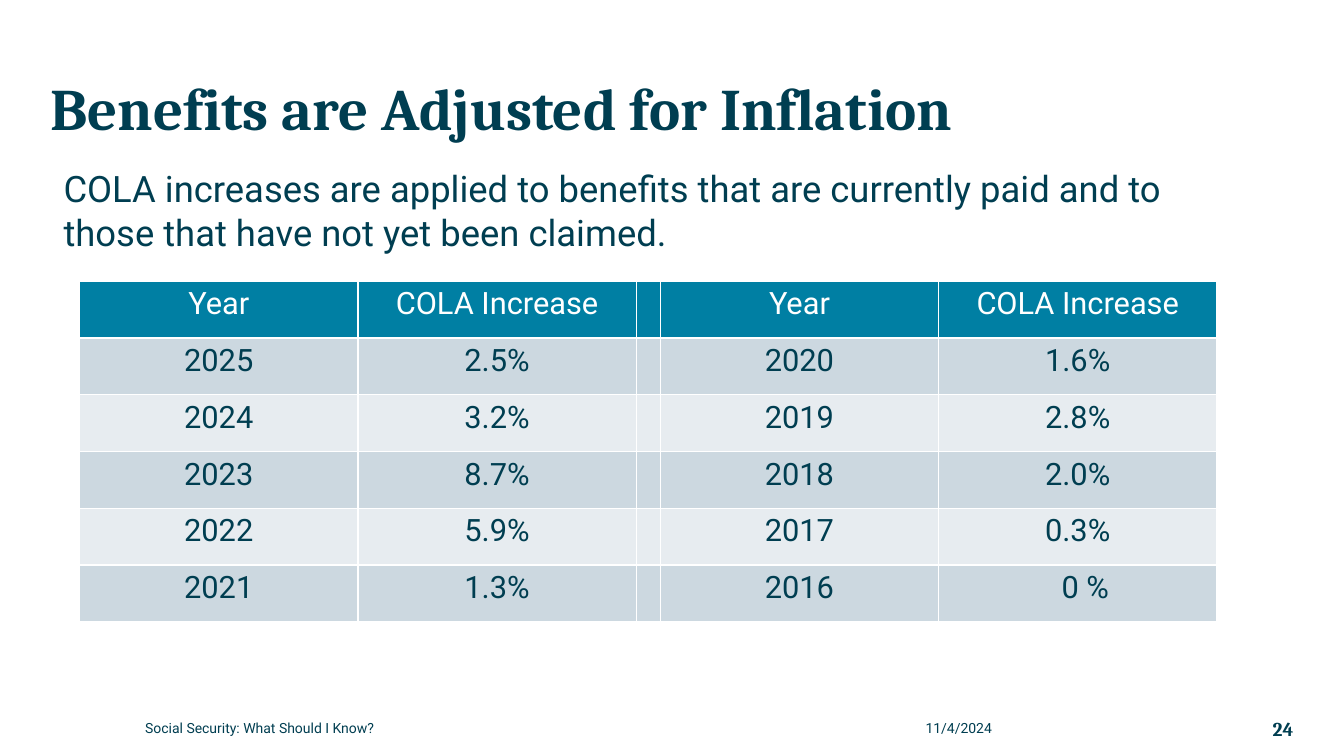
"""Build the slide on yearly cost-of-living increases to benefits."""
from dataclasses import dataclass

from pptx import Presentation
from pptx.dml.color import RGBColor
from pptx.enum.text import MSO_ANCHOR, MSO_AUTO_SIZE, PP_ALIGN
from pptx.util import Inches, Pt

LEFT, CENTER, RIGHT = PP_ALIGN.LEFT, PP_ALIGN.CENTER, PP_ALIGN.RIGHT
TOP, MIDDLE, BOTTOM = MSO_ANCHOR.TOP, MSO_ANCHOR.MIDDLE, MSO_ANCHOR.BOTTOM
FIXED = MSO_AUTO_SIZE.NONE


@dataclass(frozen=True)
class Theme:
    ink: str = "003E51"
    head: str = "007FA3"
    bands: tuple = ("CCD8E0", "E7ECF0")
    white: str = "FFFFFF"
    serif: str = "Cambria"
    sans: str = "Roboto"
    title: int = 42
    lead: int = 26
    cell: int = 22
    page: int = 14
    foot: int = 10


theme = Theme()


def style(para, size, color=theme.ink, face=theme.sans, bold=False, align=LEFT):
    para.alignment = align
    font = para.font
    font.size, font.name, font.bold = Pt(size), face, bold
    font.color.rgb = RGBColor.from_string(color)


def write(shape, area, text, anchor, *look, **more):
    shape.left, shape.top, shape.width, shape.height = map(Inches, area)
    frame = shape.text_frame
    frame.word_wrap, frame.auto_size = True, FIXED
    frame.vertical_anchor = anchor
    frame.margin_left = frame.margin_right = 0
    frame.margin_top = frame.margin_bottom = 0
    frame.text = text
    style(frame.paragraphs[0], *look, **more)


deck = Presentation()
deck.slide_width, deck.slide_height = Inches(13.33), Inches(7.5)
slide = deck.slides.add_slide(deck.slide_layouts[5])
shapes = slide.shapes

write(shapes.title, (0.5, 0.5, 12.33, 0.92), "Benefits are Adjusted for Inflation",
      BOTTOM, theme.title, face=theme.serif, bold=True)
shapes.title.text_frame.paragraphs[0].line_spacing = 0.9

lead = ("COLA increases are applied to benefits that are currently paid "
        "and to those that have not yet been claimed.")
sans, serif = (theme.foot,), (theme.page, theme.ink, theme.serif, True, RIGHT)
texts = [
    ((0.63, 1.65, 11.55, 5.27), lead, TOP, (theme.lead,)),
    ((9.18, 7.09, 2.53, 0.27), "11/4/2024", MIDDLE, sans),
    ((1.44, 7.09, 7.74, 0.27), "Social Security: What Should I Know?", MIDDLE, sans),
    ((11.72, 7.09, 1.11, 0.28), "24", MIDDLE, serif),
]
for area, text, anchor, look in texts:
    write(shapes.add_textbox(0, 0, 0, 0), area, text, anchor, *look)

rates = ["2.5%", "3.2%", "8.7%", "5.9%", "1.3%",
         "1.6%", "2.8%", "2.0%", "0.3%", "0 %"]
years = [str(2025 - step) for step in range(len(rates))]
half = len(rates) // 2
rows = [["Year", "COLA Increase", "", "Year", "COLA Increase"]]
for i in range(half):
    rows.append([years[i], rates[i], "", years[i + half], rates[i + half]])

wide, gap = 2.76, 0.23
grid = shapes.add_table(len(rows), 5, Inches(0.79), Inches(2.79),
                        Inches(4 * wide + gap), Inches(3.38)).table
for col, width in zip(grid.columns, (wide, wide, gap, wide, wide)):
    col.width = Inches(width)
for r, row in enumerate(rows):
    fill = theme.bands[(r - 1) % 2] if r else theme.head
    color = theme.ink if r else theme.white
    for c, text in enumerate(row):
        cell = grid.cell(r, c)
        cell.fill.solid()
        cell.fill.fore_color.rgb = RGBColor.from_string(fill)
        cell.text = text
        style(cell.text_frame.paragraphs[0], theme.cell, color, align=CENTER)
cell.margin_left = Inches(0.25)

deck.save("out.pptx")
